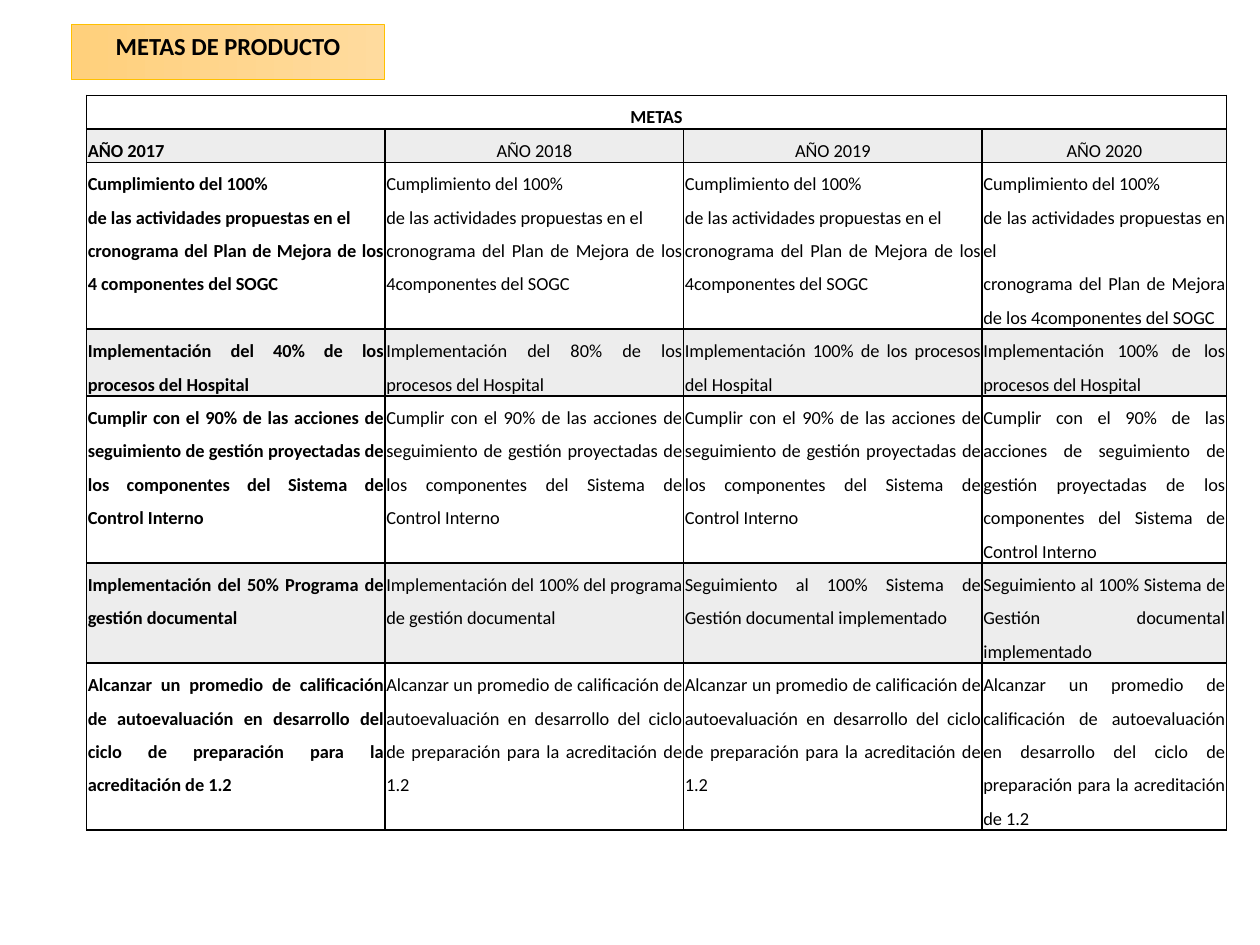
"""Build the slide of yearly product goals."""
from dataclasses import dataclass

import lxml.etree
import pptx
import pptx.dml.color
import pptx.enum.text
import pptx.oxml.ns
import pptx.slide
import pptx.table
import pptx.text.text
import pptx.util

Pt = pptx.util.Pt
Align = pptx.enum.text.PP_ALIGN
qn = pptx.oxml.ns.qn


@dataclass(frozen=True)
class Theme:
    """Colours and type sizes."""
    font: str = "Calibri"
    ink: str = "000000"
    band: str = "A5A5A5"
    edge: str = "FFC000"
    warm: str = "FFD07C"
    pale: str = "FFDB9E"
    head: float = 14
    body: float = 10.5


@dataclass(frozen=True)
class Row:
    """One table row and its height in text lines."""
    texts: tuple[str, ...]
    lines: int
    shaded: bool = False
    header: bool = False


THEME = Theme()
LINE = 19
WIDTHS = (170.6, 170.6, 170.6, 139.6)
PLAN = ("Cumplimiento del 100%\nde las actividades propuestas en el\n"
        "cronograma del Plan de Mejora de los {}componentes del SOGC")
APPLY = "Implementación {} de los procesos del Hospital"
CHECK = ("Cumplir con el 90% de las acciones de seguimiento de gestión proyectadas "
         "de los componentes del Sistema de Control Interno")
FOLLOW = "Seguimiento al 100% Sistema de Gestión documental implementado"
SCORE = ("Alcanzar un promedio de calificación de autoevaluación en desarrollo del "
         "ciclo de preparación para la acreditación de 1.2")
ROWS = (
    Row(("METAS",), 1, header=True),
    Row(tuple(f"AÑO {year}" for year in range(2017, 2021)), 1, True, True),
    Row((PLAN.format("4 "),) + (PLAN.format("4"),) * 3, 5),
    Row(tuple(APPLY.format(part) for part in ("del 40%", "del 80%", "100%", "100%")), 2, True),
    Row((CHECK,) * 4, 5),
    Row(("Implementación del 50% Programa de gestión documental",
         "Implementación del 100% del programa de gestión documental",
         FOLLOW, FOLLOW), 3, True),
    Row((SCORE,) * 4, 5),
)


def tint(code: str) -> pptx.dml.color.RGBColor:
    """Turn a hex code into a colour."""
    return pptx.dml.color.RGBColor.from_string(code)


def style(frame: pptx.text.text.TextFrame, size: float, bold: bool,
          align: Align, space: float) -> None:
    """Format every paragraph and run of a frame."""
    for para in frame.paragraphs:
        para.alignment = align
        para.line_spacing = space
        for run in para.runs:
            run.font.name = THEME.font
            run.font.size = Pt(size)
            run.font.bold = bold
            run.font.color.rgb = tint(THEME.ink)


def border(cell: pptx.table._Cell) -> None:
    """Draw a thin line on all four sides of a cell."""
    props = cell._tc.get_or_add_tcPr()
    for side in ("lnL", "lnR", "lnT", "lnB"):
        line = lxml.etree.SubElement(props, qn(f"a:{side}"), w=str(Pt(1)))
        fill = lxml.etree.SubElement(line, qn("a:solidFill"))
        lxml.etree.SubElement(fill, qn("a:srgbClr"), val=THEME.ink)


def shade(cell: pptx.table._Cell, shaded: bool) -> None:
    """Give a cell a faint band or no fill."""
    if not shaded:
        cell.fill.background()
        return
    cell.fill.solid()
    cell.fill.fore_color.rgb = tint(THEME.band)
    color = cell._tc.tcPr.find(qn("a:solidFill"))[0]
    lxml.etree.SubElement(color, qn("a:alpha"), val="20000")


def add_title(slide: pptx.slide.Slide) -> None:
    """Place the title on its gradient box."""
    title = slide.shapes.title
    title.left, title.top, title.width, title.height = Pt(40.7), Pt(14), Pt(179.3), Pt(31.5)
    title.fill.gradient()
    title.fill.gradient_angle = 0
    for stop, code in zip(title.fill.gradient_stops, (THEME.warm, THEME.pale)):
        stop.color.rgb = tint(code)
    title.line.color.rgb = tint(THEME.edge)
    title.line.width = Pt(0.5)
    frame = title.text_frame
    frame.text = "METAS DE PRODUCTO"
    frame.auto_size = pptx.enum.text.MSO_AUTO_SIZE.NONE
    frame.vertical_anchor = pptx.enum.text.MSO_ANCHOR.TOP
    style(frame, THEME.head, True, Align.CENTER, 1)


def add_goals(slide: pptx.slide.Slide) -> None:
    """Fill the table of goals by year."""
    high = LINE * sum(row.lines for row in ROWS)
    grid = slide.shapes.add_table(len(ROWS), len(WIDTHS), Pt(49.5), Pt(54.5),
                                  Pt(sum(WIDTHS)), Pt(high)).table
    grid.first_row = grid.horz_banding = False
    for col, width in zip(grid.columns, WIDTHS):
        col.width = Pt(width)
    grid.cell(0, 0).merge(grid.cell(0, len(WIDTHS) - 1))
    for line, row in zip(grid.rows, ROWS):
        line.height = Pt(LINE * row.lines)
        for col, cell in enumerate(line.cells):
            cell.margin_left = cell.margin_right = Pt(0.7)
            cell.margin_top = cell.margin_bottom = Pt(0)
            border(cell)
            shade(cell, row.shaded)
            if col < len(row.texts):
                cell.text_frame.text = row.texts[col]
                center = row.header and (col > 0 or len(row.texts) == 1)
                align = Align.CENTER if center else Align.JUSTIFY
                style(cell.text_frame, THEME.body, col == 0, align, 1.5)


def main() -> None:
    """Build and save the deck."""
    deck = pptx.Presentation()
    deck.slide_width, deck.slide_height = Pt(720), Pt(540)
    slide = deck.slides.add_slide(deck.slide_layouts[5])
    add_title(slide)
    add_goals(slide)
    deck.save("out.pptx")


if __name__ == "__main__":
    main()
